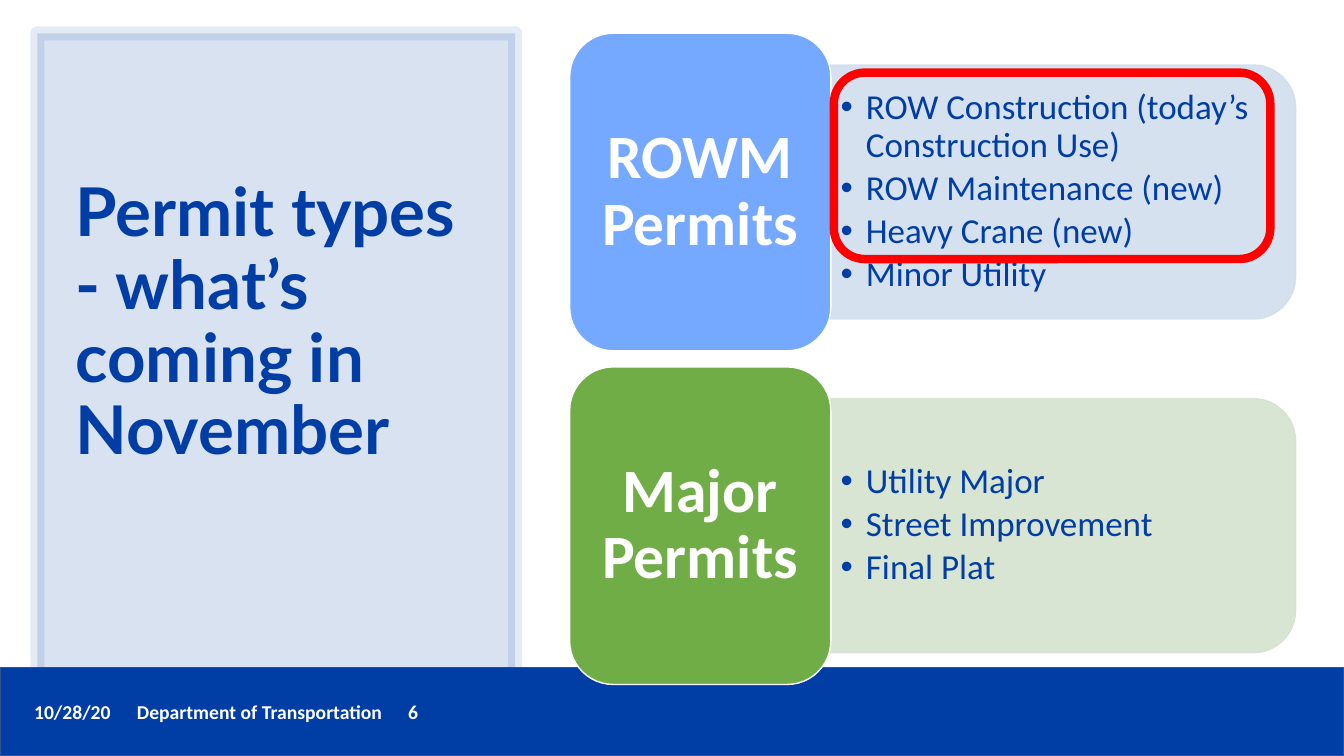
from dataclasses import dataclass

from lxml import etree
from pptx import Presentation
from pptx.dml.color import RGBColor
from pptx.enum.shapes import MSO_SHAPE
from pptx.enum.text import MSO_ANCHOR, PP_ALIGN
from pptx.oxml.ns import qn
from pptx.util import Inches, Pt

RECTANGLE = MSO_SHAPE.RECTANGLE
ROUNDED = MSO_SHAPE.ROUNDED_RECTANGLE
TWO_ROUNDED = MSO_SHAPE.ROUND_2_SAME_RECTANGLE
HIGHLIGHT = MSO_SHAPE.FLOWCHART_ALTERNATE_PROCESS
TOP, MIDDLE = MSO_ANCHOR.TOP, MSO_ANCHOR.MIDDLE
LEFT, CENTER = PP_ALIGN.LEFT, PP_ALIGN.CENTER


@dataclass(frozen=True)
class Theme:
    blue: str = "003DA5"
    bar_edge: str = "31538F"
    white: str = "FFFFFF"
    red: str = "FF0000"
    title_font: str = "Lato"
    body_font: str = "Calibri"
    title_size: float = 48
    card_size: float = 44
    list_size: float = 25
    footer_size: float = 14


@dataclass(frozen=True)
class PermitGroup:
    name: str
    items: tuple[str, ...]
    card_color: str
    list_color: str


THEME = Theme()
GROUPS = (
    PermitGroup("ROWM Permits",
                ("ROW Construction (today’s Construction Use)", "ROW Maintenance (new)",
                 "Heavy Crane (new)", "Minor Utility"), "75A8FF", "D2DEEF"),
    PermitGroup("Major Permits",
                ("Utility Major", "Street Improvement", "Final Plat"), "70AD47", "D5E3CF"),
)

CARD_LEFT, CARD_TOP, CARD_WIDTH, CARD_HEIGHT = 5.65, 0.33, 2.59, 3.15
GROUP_STEP = 3.31
LIST_LEFT, LIST_WIDTH, LIST_HEIGHT = CARD_LEFT + CARD_WIDTH, 4.61, 2.52


def set_opacity(color_format, percent: int) -> None:
    """Give a solid colour an alpha value."""
    if percent < 100:
        for color in color_format.iter(qn("a:srgbClr")):
            etree.SubElement(color, qn("a:alpha"), val=str(percent * 1000))


def add_box(page, kind, left: float, top: float, width: float, height: float, *,
            fill: str | None = None, line: str, weight: float = 1,
            fill_opacity: int = 100, line_opacity: int = 100):
    box = page.shapes.add_shape(kind, Inches(left), Inches(top), Inches(width), Inches(height))
    box.shadow.inherit = False
    if fill is None:
        box.fill.background()
    else:
        box.fill.solid()
        box.fill.fore_color.rgb = RGBColor.from_string(fill)
        set_opacity(box.element.spPr.find(qn("a:solidFill")), fill_opacity)
    box.line.color.rgb = RGBColor.from_string(line)
    box.line.width = Pt(weight)
    set_opacity(box.element.spPr.find(qn("a:ln")), line_opacity)
    return box


def write_text(box, lines: tuple[str, ...], *, size: float, color: str,
               font: str = THEME.body_font, bold: bool = False, align=LEFT, anchor=MIDDLE,
               spacing: float = 0.9, after: float = 0, bullet: bool = False,
               insets: tuple[float, float, float, float] = (0.1, 0.05, 0.1, 0.05),
               tabs: tuple[float, ...] = ()) -> None:
    frame = box.text_frame
    frame.word_wrap = True
    frame.vertical_anchor = anchor
    frame.margin_left, frame.margin_top, frame.margin_right, frame.margin_bottom = map(Inches, insets)
    for index, line in enumerate(lines):
        para = frame.add_paragraph() if index else frame.paragraphs[0]
        para.alignment = align
        para.line_spacing = spacing
        para.space_before = Pt(0)
        para.space_after = Pt(after)
        span = para.add_run()
        span.text = line
        span.font.name = font
        span.font.size = Pt(size)
        span.font.bold = bold
        span.font.color.rgb = RGBColor.from_string(color)
        properties = para._p.get_or_add_pPr()
        if bullet:
            properties.set("marL", str(Inches(0.25)))
            properties.set("indent", str(Inches(-0.25)))
            etree.SubElement(properties, qn("a:buFont"), typeface="Arial")
            etree.SubElement(properties, qn("a:buChar"), char="•")
        if tabs:
            tab_list = etree.SubElement(properties, qn("a:tabLst"))
            for stop in tabs:
                etree.SubElement(tab_list, qn("a:tab"), pos=str(Inches(stop)), algn="l")


def add_text(page, left: float, top: float, width: float, height: float,
             lines: tuple[str, ...], **text_format) -> None:
    box = page.shapes.add_textbox(Inches(left), Inches(top), Inches(width), Inches(height))
    write_text(box, lines, **text_format)


def add_footer(page) -> None:
    add_box(page, RECTANGLE, 0, 6.62, 13.33, 0.88, fill=THEME.blue, line=THEME.bar_edge)
    add_text(page, 0.24, 6.89, 10.06, 0.34, ("10/28/20\tDepartment of Transportation\t6",),
             size=THEME.footer_size, color=THEME.white, bold=True, anchor=TOP,
             spacing=1.0, tabs=(1.02, 3.71))


def add_title(page) -> None:
    add_box(page, RECTANGLE, 0.37, 0.33, 4.74, 6.45, fill=THEME.blue, fill_opacity=15,
            line=THEME.blue, weight=10, line_opacity=10)
    title = page.shapes.title
    title.left, title.top, title.width, title.height = map(Inches, (0.65, 0.7, 4.16, 5.75))
    # The deeper bottom inset lifts the title above the panel's middle
    write_text(title, ("Permit types - what’s coming in November",), size=THEME.title_size,
               color=THEME.blue, font=THEME.title_font, bold=True,
               insets=(0.1, 0.05, 0.1, 0.77))
    # Bring the title in front of its panel
    title.element.getparent().append(title.element)


def add_group(page, group: PermitGroup, top: float) -> None:
    # List panel: an upright shape turned so its rounded end faces right
    middle = top + CARD_HEIGHT / 2
    panel = add_box(page, TWO_ROUNDED, LIST_LEFT + (LIST_WIDTH - LIST_HEIGHT) / 2,
                    middle - LIST_WIDTH / 2, LIST_HEIGHT, LIST_WIDTH,
                    fill=group.list_color, fill_opacity=90,
                    line=group.list_color, line_opacity=90)
    panel.rotation = 90
    add_text(page, LIST_LEFT, middle - 1.135, 4.49, 2.27, group.items, size=THEME.list_size,
             color=THEME.blue, after=3.75, bullet=True)
    # Name card
    card = add_box(page, ROUNDED, CARD_LEFT, top, CARD_WIDTH, CARD_HEIGHT,
                   fill=group.card_color, line=THEME.white)
    write_text(card, (group.name,), size=THEME.card_size, color=THEME.white, bold=True,
               align=CENTER, insets=(0.18, 0.09, 0.18, 0.09))


def main() -> None:
    deck = Presentation()
    deck.slide_width, deck.slide_height = Inches(13.33), Inches(7.5)
    page = deck.slides.add_slide(deck.slide_layouts[5])
    add_footer(page)
    add_title(page)
    for index, group in enumerate(GROUPS):
        add_group(page, group, CARD_TOP + index * GROUP_STEP)
    # Ring around the permits that change
    add_box(page, HIGHLIGHT, 8.27, 0.72, 4.33, 1.85, line=THEME.red, weight=6)
    deck.save("out.pptx")


if __name__ == "__main__":
    main()
